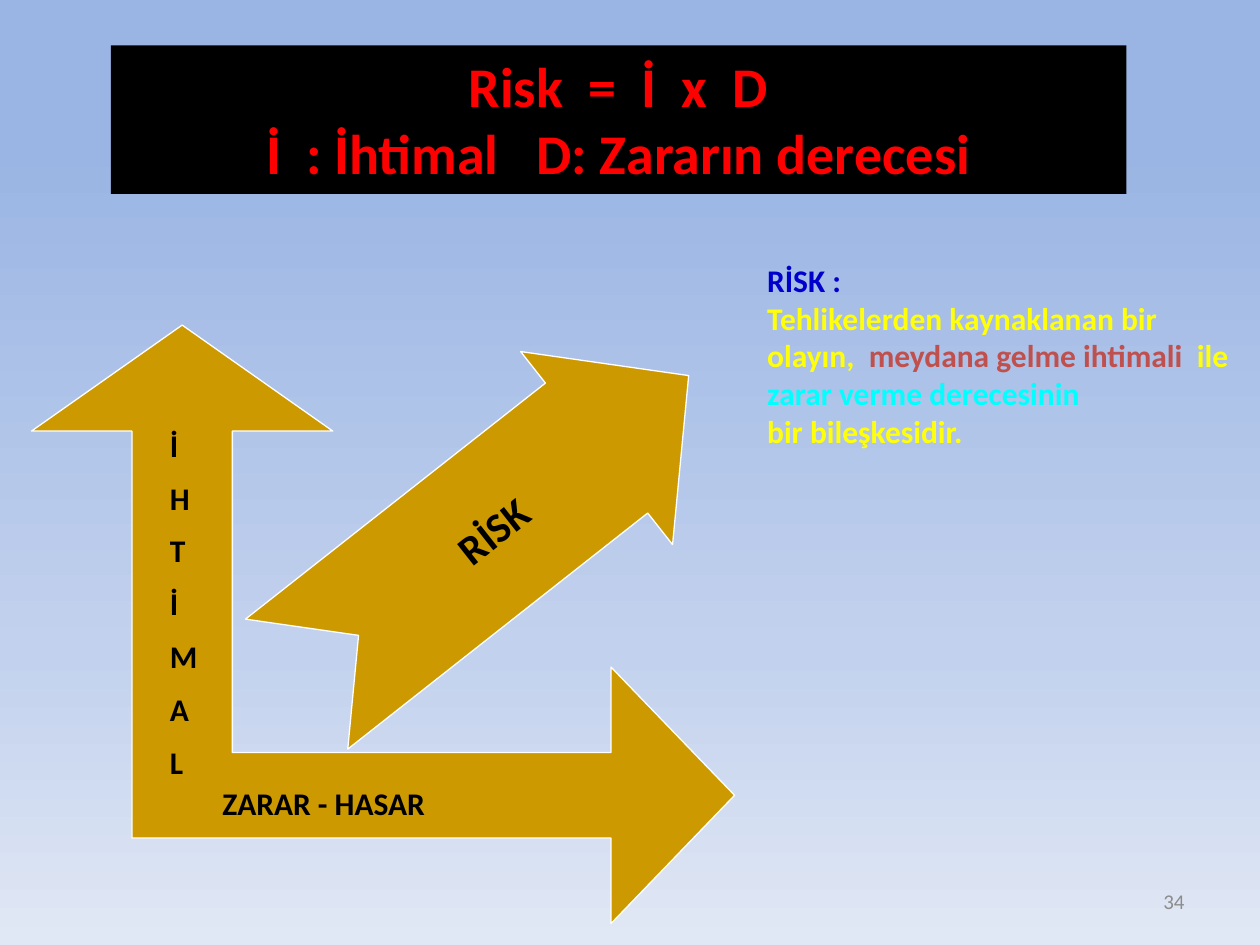
from collections import namedtuple
from copy import deepcopy

from pptx import Presentation
from pptx.dml.color import RGBColor
from pptx.enum.shapes import MSO_SHAPE
from pptx.enum.text import MSO_ANCHOR, PP_ALIGN
from pptx.oxml.ns import qn
from pptx.util import Inches, Pt

COLORS = {
    "sky": "9AB5E4", "haze": "C2D1ED", "mist": "E1E8F5",
    "black": "000000", "white": "FFFFFF", "red": "FF0000",
    "gold": "CC9900", "blue": "0000CC", "yellow": "FFFF0B",
    "brick": "C0504D", "cyan": "00FFFF", "gray": "8C8C8C",
}
COLUMNS, ROWS = 100, 75
CELL = Inches(10) // COLUMNS
ELBOW_GRID = 7

Box = namedtuple("Box", "left top width height")


def color(name):
    return RGBColor.from_string(COLORS[name])


def lengths(box):
    return [round(value * CELL) for value in box]


def paint(shape, fill, line=None):
    shape.shadow.inherit = False
    shape.fill.solid()
    shape.fill.fore_color.rgb = color(fill)
    if line:
        shape.line.color.rgb = color(line)
        shape.line.width = Pt(0.75)
    else:
        shape.line.fill.background()


def write(shape, paragraphs, size=18, bold=True, align=PP_ALIGN.LEFT,
          anchor=MSO_ANCHOR.TOP, gap=0, wrap=True):
    """Each paragraph is a list of (text, color name) runs."""
    frame = shape.text_frame
    frame.word_wrap = wrap
    frame.vertical_anchor = anchor
    for index, runs in enumerate(paragraphs):
        paragraph = frame.add_paragraph() if index else frame.paragraphs[0]
        paragraph.alignment = align
        if index and gap:
            paragraph.space_before = Pt(gap)
        for text, name in runs:
            run = paragraph.add_run()
            run.text = text
            run.font.name = "Calibri"
            run.font.size = Pt(size)
            run.font.bold = bold
            run.font.color.rgb = color(name)


def add_text(slide, box, paragraphs, **text_format):
    write(slide.shapes.add_textbox(*lengths(box)), paragraphs, **text_format)


def set_background(slide):
    fill = slide.background.fill
    fill.gradient()
    fill.gradient_angle = 270
    stop_list = slide.element.find(".//" + qn("a:gsLst"))
    stop_list.append(deepcopy(stop_list[-1]))
    stops = [("sky", 0.15), ("haze", 0.69), ("mist", 1)]
    for stop, (name, position) in zip(fill.gradient_stops, stops):
        stop.color.rgb = color(name)
        stop.position = position


def add_formula(slide, box):
    banner = slide.shapes.add_shape(MSO_SHAPE.RECTANGLE, *lengths(box))
    paint(banner, "black")
    write(banner, [[("Risk  =  İ  x  D", "red")],
                   [("İ  : İhtimal   D: Zararın derecesi", "red")]],
          size=32, align=PP_ALIGN.CENTER)


def add_axes(slide, box):
    # Two-headed elbow arrow on a grid of sevenths of its box
    left, top, width, height = lengths(box)
    corners = [(7, 5.5), (5.77, 4), (5.77, 5), (2, 5), (2, 1.24), (3, 1.24),
               (1.5, 0), (0, 1.24), (1, 1.24), (1, 6), (5.77, 6), (5.77, 7)]
    points = [(round(left + x * width / ELBOW_GRID),
               round(top + y * height / ELBOW_GRID)) for x, y in corners]
    builder = slide.shapes.build_freeform(*points[0])
    builder.add_line_segments(points[1:], close=True)
    paint(builder.convert_to_shape(), "gold", "white")

    # Axis labels
    x, y, w, h = box
    add_text(slide, Box(x + w * 0.254, y + h * 0.756, w * 0.52, 4),
             [[("ZARAR - HASAR", "black")]])
    add_text(slide, Box(x + w * 0.179, y + h * 0.158, 4.2, h * 0.655),
             [[(letter, "black")] for letter in "İHTİMAL"], gap=8.6)


def add_risk_arrow(slide, box):
    arrow = slide.shapes.add_shape(MSO_SHAPE.NOTCHED_RIGHT_ARROW, *lengths(box))
    arrow.adjustments[0], arrow.adjustments[1] = 0.673, 0.477
    arrow.rotation = 321.8
    paint(arrow, "gold", "white")
    write(arrow, [[("RİSK", "black")]], size=24, align=PP_ALIGN.CENTER,
          anchor=MSO_ANCHOR.MIDDLE, wrap=False)


def add_definition(slide, box):
    add_text(slide, box, [
        [("RİSK :", "blue")],
        [("Tehlikelerden kaynaklanan bir olayın,  ", "yellow"),
         ("meydana gelme ihtimali", "brick"),
         ("  ile ", "yellow"),
         ("zarar verme derecesinin", "cyan")],
        [("bir bileşkesidir.", "yellow")],
    ])


def add_page_number(slide, box):
    add_text(slide, box, [[("34", "gray")]], size=12, bold=False,
             align=PP_ALIGN.RIGHT, anchor=MSO_ANCHOR.MIDDLE)


def main():
    presentation = Presentation()
    presentation.slide_width = COLUMNS * CELL
    presentation.slide_height = ROWS * CELL
    slide = presentation.slides.add_slide(presentation.slide_layouts[6])
    set_background(slide)
    add_formula(slide, Box(8.8, 3.6, 80.6, 11.8))
    add_axes(slide, Box(2.5, 25.8, 55.8, 47.5))
    add_risk_arrow(slide, Box(19.3, 32.3, 39.6, 19.5))
    add_definition(slide, Box(59.9, 20.2, 39.8, 16.2))
    add_page_number(slide, Box(71.7, 69.5, 23.3, 4))
    presentation.save("out.pptx")


if __name__ == "__main__":
    main()
